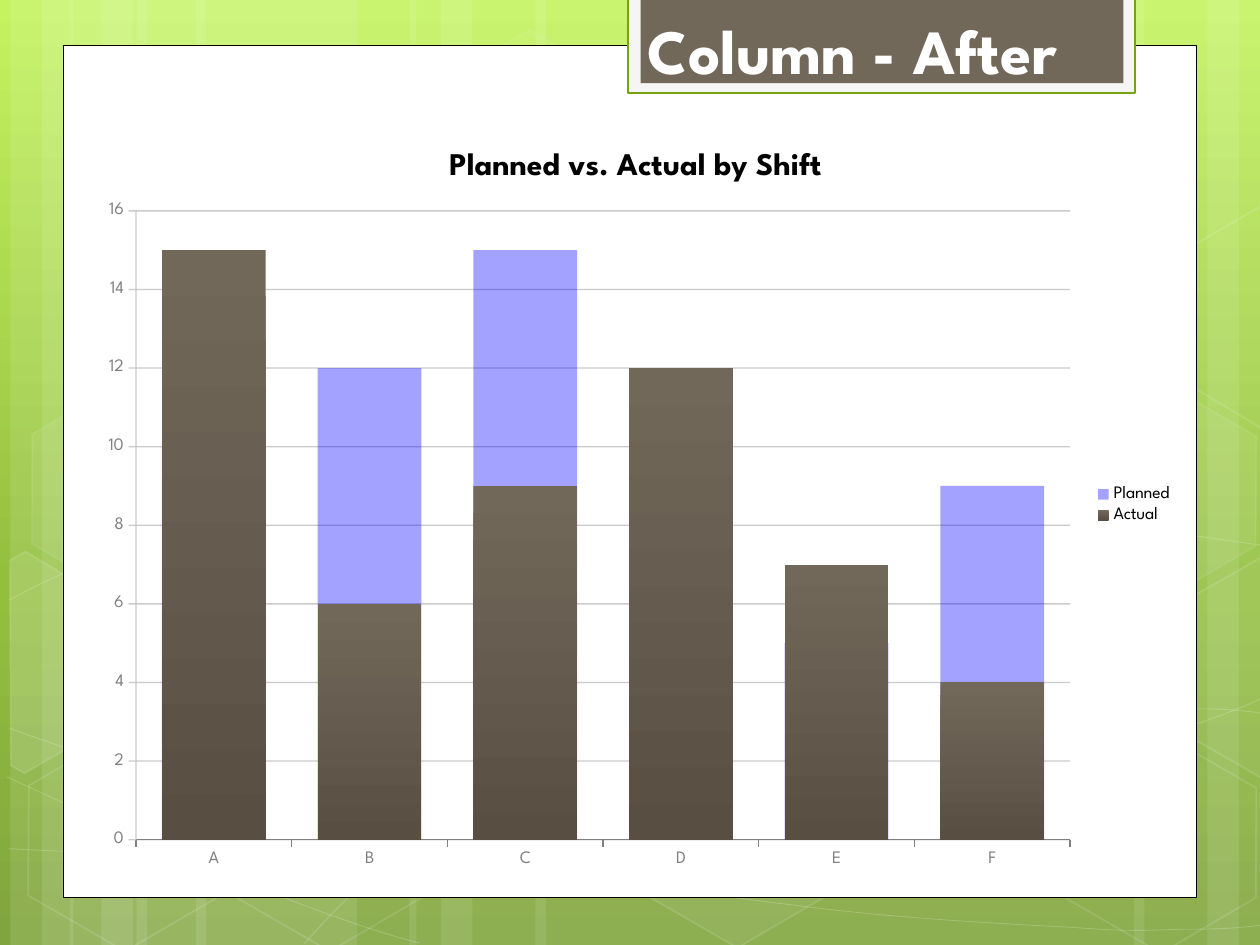
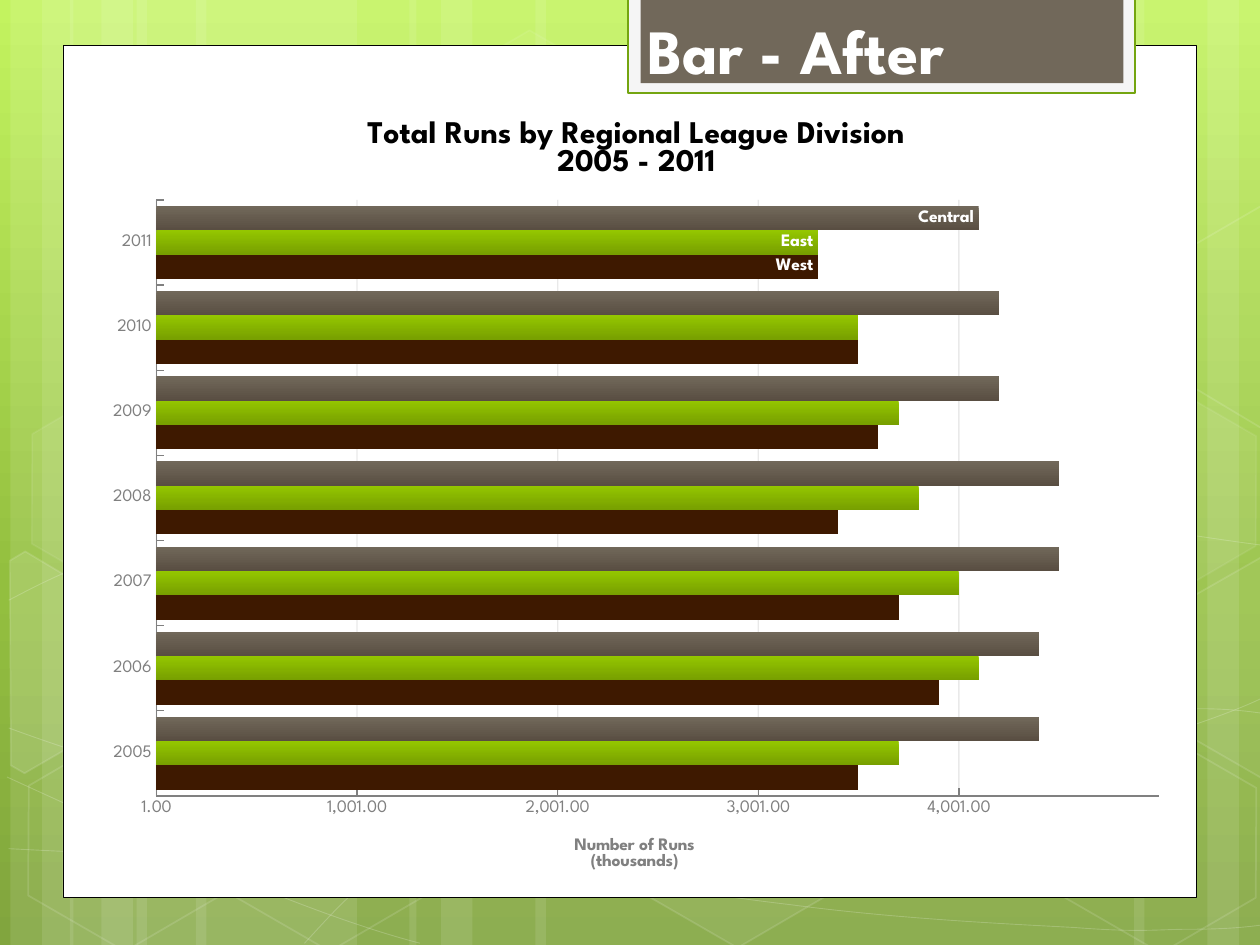
import copy
import math

import lxml.etree
import pptx
import pptx.chart.data
import pptx.dml.color
import pptx.enum.chart
import pptx.enum.shapes
import pptx.enum.text
import pptx.oxml.ns
import pptx.util

Pt = pptx.util.Pt
RGBColor = pptx.dml.color.RGBColor
qn = pptx.oxml.ns.qn
TickMark = pptx.enum.chart.XL_TICK_MARK
ChartType = pptx.enum.chart.XL_CHART_TYPE
ShapeType = pptx.enum.shapes.MSO_SHAPE

FONT = "League Spartan"
WHITE = RGBColor(0xFF, 0xFF, 0xFF)
BLACK = RGBColor(0, 0, 0)
TAUPE = RGBColor(0x71, 0x68, 0x5A)
DARK_TAUPE = RGBColor(0x59, 0x4E, 0x42)
GREEN = RGBColor(0x94, 0xC6, 0x00)
DARK_GREEN = RGBColor(0x77, 0x9F, 0x00)
TAB_GREEN = RGBColor(0x74, 0xA5, 0x10)
BROWN = RGBColor(0x3E, 0x19, 0x00)
BLUE = RGBColor(0, 0, 0xFF)
GRAY = RGBColor(0x80, 0x80, 0x80)
LIGHT_GRAY = RGBColor(0xBF, 0xBF, 0xBF)
OFF_WHITE = RGBColor(0xF5, 0xF5, 0xF5)
BACKGROUND_STOPS = [
    (0, RGBColor(0xC3, 0xF3, 0x5F)),
    (62, RGBColor(0x93, 0xBF, 0x3F)),
    (100, RGBColor(0x81, 0xA5, 0x3E)),
]

TILT = 30
BANDS = [
    (78, 126), (6, 36), (24, 60), (112, 126), (40, 36), (58, 60),
    (528, 126), (690, 36), (648, 60), (306, 222), (234, 36), (252, 60),
]
CURVES = [
    [(5, 485), (44, 487), (83, 489), (137, 488), (191, 487), (258, 486), (330, 479),
     (402, 472), (504, 458), (570, 444), (636, 431), (703, 409), (725, 397)],
    [(5, 343), (26, 332), (47, 321), (87, 310), (128, 300), (186, 284), (250, 279),
     (314, 274), (393, 273), (471, 279), (550, 284), (682, 307), (725, 312)],
    [(4, 444), (91, 484), (178, 523), (240, 539)],
    [(5, 416), (27, 424), (50, 432), (92, 444), (134, 454), (197, 472), (257, 485),
     (317, 497), (392, 510), (452, 517), (512, 525), (576, 528), (614, 530),
     (652, 533), (662, 531), (680, 531), (699, 531), (712, 530), (725, 528)],
    [(174, 539), (187, 525), (200, 510), (217, 498), (235, 485), (259, 470), (279, 460),
     (300, 450), (312, 446), (338, 438), (364, 431), (413, 421), (438, 416),
     (464, 411), (467, 411), (490, 410), (512, 407), (547, 405), (572, 405),
     (597, 404), (638, 405), (638, 405), (654, 405), (670, 405), (686, 405),
     (699, 405), (711, 406), (724, 408)],
]
HEXAGONS = [
    (240, 26, 4, 8), (358, 424, 6, 12), (8, 426, 0, 12), (10, 225, 7, 8),
    (125, 426, 0, 12), (542, 326, 10, 12), (600, 427, 0, 12), (600, 226, 7, 8),
]
CUT_HEXAGONS = [
    ([(6, 320), (14, 315), (69, 347), (68, 410), (14, 442), (6, 437)], (26, 385), 10),
    ([(667, 349), (721, 318), (726, 321), (726, 441), (721, 444), (667, 413)], (709, 374), 4),
    ([(667, 149), (721, 117), (727, 121), (726, 241), (721, 244), (667, 212)], (709, 174), 0),
]


def add_element(parent, tag, value):
    return lxml.etree.SubElement(parent, qn(tag), val=str(value))


def paint(fill, color, opacity=100):
    if not opacity:
        fill.background()
        return
    fill.solid()
    fill.fore_color.rgb = color
    if opacity < 100:
        add_element(fill._xPr.find(".//" + qn("a:srgbClr")), "a:alpha", opacity * 1000)


def draw_line(line, color, width, opacity=100):
    line.width = Pt(width)
    paint(line.fill, color, opacity)


def style_font(font, size, color, bold=False):
    font.name = FONT
    font.size = Pt(size)
    font.bold = bold
    font.color.rgb = color


def write_text(text_frame, text, size, color):
    text_frame.text = text
    for paragraph in text_frame.paragraphs:
        for run in paragraph.runs:
            style_font(run.font, size, color, True)


def add_box(slide, shape_type, box, color, opacity=100):
    shape = slide.shapes.add_shape(shape_type, *[Pt(length) for length in box])
    shape.shadow.inherit = False
    paint(shape.fill, color, opacity)
    shape.line.fill.background()
    return shape


def add_outline(slide, points, closed, fill_opacity, line_width, line_opacity):
    builder = slide.shapes.build_freeform(*points[0], scale=Pt(1))
    builder.add_line_segments(points[1:], close=closed)
    shape = builder.convert_to_shape()
    shape.shadow.inherit = False
    paint(shape.fill, WHITE, fill_opacity)
    draw_line(shape.line, WHITE, line_width, line_opacity)
    return shape


def bend(shape):
    outline = shape._element.find(".//" + qn("a:pathLst"))[0]
    segments = outline.findall(qn("a:lnTo"))
    for start in range(0, len(segments), 3):
        curve = lxml.etree.SubElement(outline, qn("a:cubicBezTo"))
        for segment in segments[start:start + 3]:
            curve.append(segment[0])
            outline.remove(segment)


def untilt(point, center):
    angle = math.radians(TILT)
    x, y = point[0] - center[0], point[1] - center[1]
    return (round(center[0] + x * math.cos(angle) + y * math.sin(angle), 2),
            round(center[1] - x * math.sin(angle) + y * math.cos(angle), 2))


def set_background(layout):
    fill = layout.background.fill
    fill.gradient()
    fill.gradient_angle = 270
    stops = fill._xPr.find(".//" + qn("a:gsLst"))
    for stop in list(stops):
        stops.remove(stop)
    for position, color in BACKGROUND_STOPS:
        stop = lxml.etree.SubElement(stops, qn("a:gs"), pos=str(position * 1000))
        add_element(stop, "a:srgbClr", color)


def draw_backdrop(slide):
    for left, width in BANDS:
        add_box(slide, ShapeType.RECTANGLE, (left, 0, width, 540), WHITE, 10)
    for controls in CURVES:
        bend(add_outline(slide, controls, False, 0, 0.5, 20))
    for left, top, fill_opacity, line_opacity in HEXAGONS:
        hexagon = add_box(slide, ShapeType.HEXAGON, (left, top, 126, 109), WHITE, fill_opacity)
        hexagon.adjustments[0] = 0.285
        hexagon.rotation = TILT
        draw_line(hexagon.line, WHITE, 1, line_opacity)
    for points, center, fill_opacity in CUT_HEXAGONS:
        upright = [untilt(point, center) for point in points]
        add_outline(slide, upright, True, fill_opacity, 1, 12).rotation = TILT


def draw_panel(slide):
    panel = add_box(slide, ShapeType.RECTANGLE, (36, 26, 648, 487), WHITE)
    draw_line(panel.line, BLACK, 0.5)
    tab = add_box(slide, ShapeType.RECTANGLE, (359, -1.2, 289.5, 54.4), OFF_WHITE)
    draw_line(tab.line, TAB_GREEN, 1.25)
    add_box(slide, ShapeType.RECTANGLE, (366, -1.2, 276, 48.7), TAUPE)


def move_to_layout(slide, layout):
    drawn = [shape for shape in slide.shapes if not shape.is_placeholder]
    for number, shape in enumerate(drawn, 100):
        shape._element.nvSpPr.cNvPr.set("id", str(number))
        layout.shapes._spTree.append(shape._element)


def set_title(slide, text, box):
    title = slide.shapes.title
    title.left, title.top, title.width, title.height = [Pt(length) for length in box]
    write_text(title.text_frame, text, 36, WHITE)
    title.text_frame.word_wrap = True
    title.text_frame.auto_size = pptx.enum.text.MSO_AUTO_SIZE.NONE
    title.text_frame.vertical_anchor = pptx.enum.text.MSO_ANCHOR.BOTTOM
    title.text_frame.paragraphs[0].alignment = pptx.enum.text.PP_ALIGN.LEFT


def place(parent, index, **fractions):
    for old_layout in parent.findall(qn("c:layout")):
        parent.remove(old_layout)
    layout = lxml.etree.Element(qn("c:layout"))
    parent.insert(index, layout)
    manual = lxml.etree.SubElement(layout, qn("c:manualLayout"))
    if "w" in fractions:
        add_element(manual, "c:layoutTarget", "inner")
    for name in ("x", "y"):
        add_element(manual, f"c:{name}Mode", "edge")
    for name, fraction in fractions.items():
        add_element(manual, f"c:{name}", fraction)


def add_bar_chart(slide, box, chart_type, categories, values_by_series, title, tick_mark):
    data = pptx.chart.data.CategoryChartData()
    data.categories = categories
    for name, values in values_by_series.items():
        data.add_series(name, values)
    frame = slide.shapes.add_chart(chart_type, *[Pt(length) for length in box], data)
    chart = frame.chart
    style_font(chart.font, 10, BLACK)
    chart.has_title = True
    write_text(chart.chart_title.text_frame, title, 18, BLACK)
    chart.plots[0].vary_by_categories = False
    chart.plots[0].gap_width = 50
    for axis in (chart.category_axis, chart.value_axis):
        axis.major_tick_mark = tick_mark
        axis.minor_tick_mark = TickMark.NONE
        style_font(axis.tick_labels.font, 10, GRAY)
        draw_line(axis.format.line, GRAY, 0.75)
    chart.value_axis.has_major_gridlines = True
    return chart


def shade(series, top_color, bottom_color):
    fill = series.format.fill
    fill.gradient()
    fill.gradient_angle = 270
    for stop, color in zip(fill.gradient_stops, (top_color, bottom_color)):
        stop.color.rgb = color


def move_last_series_to_second_axes(chart):
    plot_area = chart._chartSpace.chart.plotArea
    bars = plot_area.find(qn("c:barChart"))
    second_bars = copy.deepcopy(bars)
    bars.remove(bars.findall(qn("c:ser"))[-1])
    second_bars.remove(second_bars.findall(qn("c:ser"))[0])
    bars.addnext(second_bars)
    axes = [plot_area.find(qn(tag)) for tag in ("c:catAx", "c:valAx")]
    second_axes = [copy.deepcopy(axis) for axis in axes]
    new_ids = {axis.find(qn("c:axId")).get("val"): str(number)
               for number, axis in enumerate(axes, 5001)}
    for axis in second_axes:
        axis.find(qn("c:delete")).set("val", "1")
        for gridlines in axis.findall(qn("c:majorGridlines")):
            axis.remove(gridlines)
        axes[-1].addnext(axis)
    second_axes[1].find(qn("c:axPos")).set("val", "r")
    second_axes[1].find(qn("c:crosses")).set("val", "max")
    for part in [second_bars] + second_axes:
        for reference in part.findall(qn("c:axId")) + part.findall(qn("c:crossAx")):
            reference.set("val", new_ids[reference.get("val")])


def label_latest_bar(series, index):
    series.data_labels.show_value = False
    label = series.points[index].data_label
    label.position = pptx.enum.chart.XL_LABEL_POSITION.INSIDE_END
    style_font(label.font, 10, WHITE, True)
    element = series._element.find(".//" + qn("c:dLbl"))
    element.find(qn("c:showVal")).set("val", "0")
    element.find(qn("c:showSerName")).set("val", "1")


def draw_shift_chart(slide, box):
    chart = add_bar_chart(
        slide, box, ChartType.COLUMN_CLUSTERED, list("ABCDEF"),
        {"Planned": (10, 12, 15, 8, 5, 9), "Actual": (15, 6, 9, 12, 7, 4)},
        "Planned vs. Actual by Shift", TickMark.OUTSIDE)
    plot = chart.plots[0]
    plot.overlap = 100
    paint(plot.series[0].format.fill, BLUE, 36)
    shade(plot.series[1], TAUPE, DARK_TAUPE)
    axis = chart.value_axis
    draw_line(axis.format.line, LIGHT_GRAY, 0.75, 80)
    draw_line(axis.major_gridlines.format.line, LIGHT_GRAY, 0.75, 80)
    chart.has_legend = True
    chart.legend.position = pptx.enum.chart.XL_LEGEND_POSITION.RIGHT
    chart.legend.include_in_layout = False
    style_font(chart.legend.font, 10, BLACK)
    place(chart.chart_title._element, 1, x=0.325, y=0.025)
    place(chart._chartSpace.chart.plotArea, 0, x=0.045, y=0.113, w=0.85, h=0.828)
    move_last_series_to_second_axes(chart)


def draw_runs_chart(slide, box):
    years = [str(year) for year in range(2005, 2012)]
    chart = add_bar_chart(
        slide, box, ChartType.BAR_CLUSTERED, years,
        {"West": (3500, 3900, 3700, 3400, 3600, 3500, 3300),
         "East": (3700, 4100, 4000, 3800, 3700, 3500, 3300),
         "Central": (4400, 4400, 4500, 4500, 4200, 4200, 4100)},
        "Total Runs by Regional League Division\n2005 - 2011", TickMark.INSIDE)
    chart.has_legend = False
    west, east, central = chart.plots[0].series
    paint(west.format.fill, BROWN)
    shade(east, GREEN, DARK_GREEN)
    shade(central, TAUPE, DARK_TAUPE)
    for series in (west, east, central):
        label_latest_bar(series, len(years) - 1)
    axis = chart.value_axis
    axis.minimum_scale, axis.maximum_scale, axis.major_unit = 1, 5000, 1000
    axis.tick_labels.number_format = "#,##0.00"
    axis.tick_labels.number_format_is_linked = False
    draw_line(axis.major_gridlines.format.line, LIGHT_GRAY, 0.75, 33)
    axis.has_title = True
    write_text(axis.axis_title.text_frame, "Number of Runs\n(thousands)", 10, GRAY)
    place(axis.axis_title._element, 1, x=0.44, y=0.918)
    place(chart.chart_title._element, 1, x=0.25, y=0.029)
    place(chart._chartSpace.chart.plotArea, 0, x=0.06, y=0.135, w=0.92, h=0.738)


def main():
    presentation = pptx.Presentation()
    presentation.slide_width, presentation.slide_height = Pt(720), Pt(540)
    layout = presentation.slide_layouts.get_by_name("Title Only")
    set_background(layout)

    column_slide = presentation.slides.add_slide(layout)
    draw_backdrop(column_slide)
    draw_panel(column_slide)
    move_to_layout(column_slide, layout)
    set_title(column_slide, "Column - After", (363, 2.5, 279, 51))
    draw_shift_chart(column_slide, (49.5, 71.5, 628, 434))

    bar_slide = presentation.slides.add_slide(layout)
    draw_runs_chart(bar_slide, (52, 52, 623, 461.5))
    set_title(bar_slide, "Bar - After", (363, 2.5, 261, 51))

    presentation.save("out.pptx")


if __name__ == "__main__":
    main()
